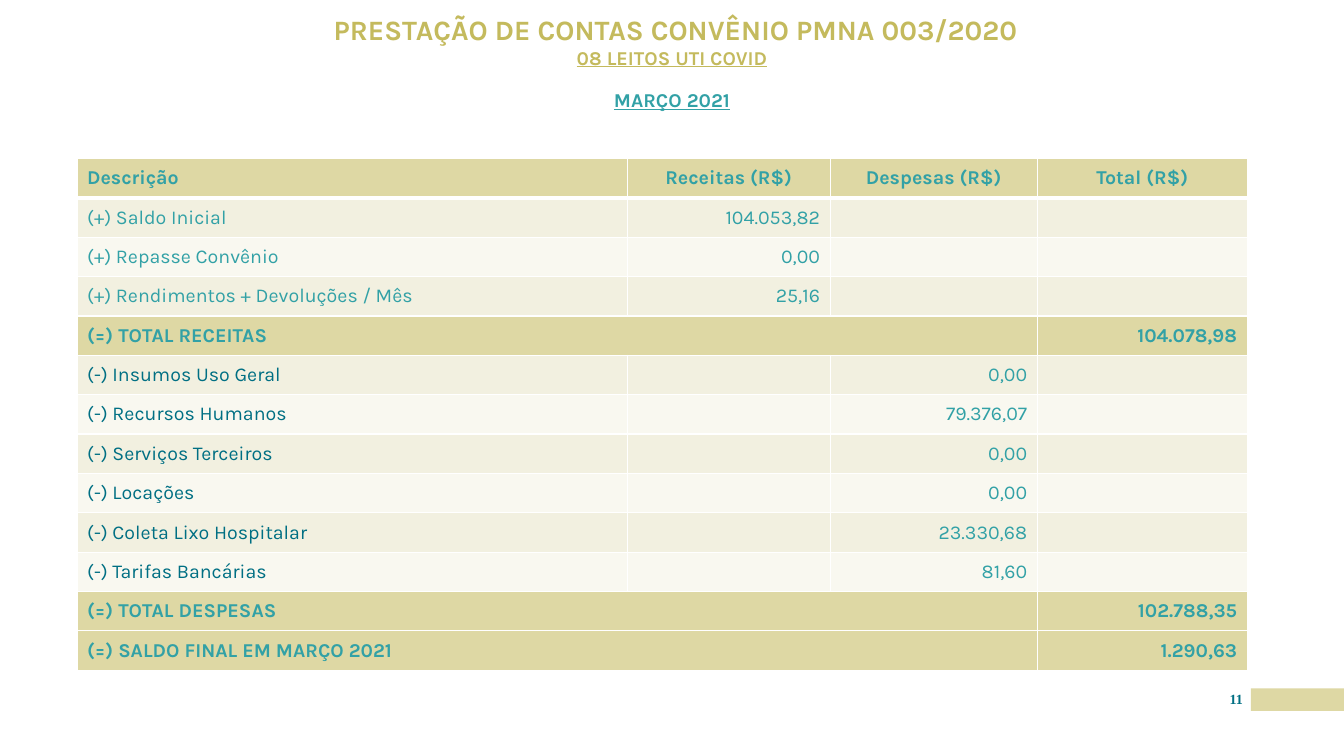
"""Build the March 2021 statement-of-accounts slide."""
from lxml.etree import SubElement
from pptx import Presentation
from pptx.dml.color import RGBColor
from pptx.enum.shapes import MSO_SHAPE
from pptx.enum.text import MSO_ANCHOR, PP_ALIGN
from pptx.oxml.ns import qn
from pptx.util import Pt

GOLD, SAND, TEAL, PETROL, WHITE = "C4BA5D", "DED8A4", "32A1A6", "006F83", "FFFFFF"
BANDS = ("F9F8F0", "F2F0E0")

HEADINGS = [
    (" PRESTAÇÃO DE CONTAS CONVÊNIO PMNA 003/2020", 20, GOLD, False, 0),
    ("08 LEITOS UTI COVID", 14, GOLD, True, 1),
    ("MARÇO 2021", 14, TEAL, True, 15),
]
PAGE_NUMBER = "11"
COLUMN_WIDTHS = (393, 145, 148, 150)
ROW_HEIGHT = 28.14
STATEMENT = [
    ("Descrição", "Receitas (R$)", "Despesas (R$)", "Total (R$)"),
    ("(+) Saldo Inicial", "104.053,82", "", ""),
    ("(+) Repasse Convênio", "0,00", "", ""),
    ("(+) Rendimentos + Devoluções / Mês", "25,16", "", ""),
    ("(=) TOTAL RECEITAS", "", "", "104.078,98"),
    ("(-) Insumos Uso Geral", "", "0,00", ""),
    ("(-) Recursos Humanos", "", "79.376,07", ""),
    ("(-) Serviços Terceiros", "", "0,00", ""),
    ("(-) Locações", "", "0,00", ""),
    ("(-) Coleta Lixo Hospitalar", "", "23.330,68", ""),
    ("(-) Tarifas Bancárias", "", "81,60", ""),
    ("(=) TOTAL DESPESAS", "", "", "102.788,35"),
    ("(=) SALDO FINAL EM MARÇO 2021", "", "", "1.290,63"),
]


def rgb(color):
    return RGBColor.from_string(color)


def style(paragraph, size, color, bold, align, face="Karla"):
    paragraph.alignment = align
    font = paragraph.font
    font.name, font.size, font.bold = face, Pt(size), bold
    font.color.rgb = rgb(color)


def add_text_frame(slide, left, top, width, height):
    frame = slide.shapes.add_textbox(Pt(left), Pt(top), Pt(width), Pt(height)).text_frame
    frame.word_wrap = True
    frame.margin_left = frame.margin_right = frame.margin_top = frame.margin_bottom = 0
    return frame


def set_borders(cell, bottom_width):
    properties = cell._tc.get_or_add_tcPr()
    widths = {"a:lnL": 1, "a:lnR": 1, "a:lnT": 1, "a:lnB": bottom_width}
    for position, (side, width) in enumerate(widths.items()):
        line = SubElement(properties, qn(side), w=str(Pt(width)))
        SubElement(SubElement(line, qn("a:solidFill")), qn("a:srgbClr"), val=WHITE)
        properties.insert(position, line)


def add_headings(slide):
    frame = add_text_frame(slide, 0, 12, 960, 106)
    for index, (text, size, color, underline, gap) in enumerate(HEADINGS):
        paragraph = frame.add_paragraph() if index else frame.paragraphs[0]
        paragraph.text = text
        paragraph.line_spacing = 0.9
        paragraph.space_before = Pt(gap)
        style(paragraph, size, color, True, PP_ALIGN.CENTER)
        paragraph.font.underline = underline


def add_statement(slide):
    table = slide.shapes.add_table(
        len(STATEMENT), len(COLUMN_WIDTHS), Pt(55), Pt(113.2),
        Pt(sum(COLUMN_WIDTHS)), Pt(ROW_HEIGHT * len(STATEMENT))).table
    table.horz_banding = False
    for column, width in zip(table.columns, COLUMN_WIDTHS):
        column.width = Pt(width)
    for row, entries in enumerate(STATEMENT):
        table.rows[row].height = Pt(ROW_HEIGHT)
        header, total = row == 0, entries[0].startswith("(=)")
        strong = header or total
        for column, entry in enumerate(entries):
            cell = table.cell(row, column)
            cell.text = entry
            cell.vertical_anchor = MSO_ANCHOR.MIDDLE
            cell.margin_top = cell.margin_bottom = Pt(2)
            cell.fill.solid()
            cell.fill.fore_color.rgb = rgb(SAND if strong else BANDS[row % 2])
            set_borders(cell, 3 if header else 1)
            expense = column == 0 and entry.startswith("(-)")
            figures = PP_ALIGN.CENTER if header else PP_ALIGN.RIGHT
            style(cell.text_frame.paragraphs[0], 14, PETROL if expense else TEAL,
                  strong, figures if column else PP_ALIGN.LEFT)
        if total:
            table.cell(row, 0).merge(table.cell(row, 2))


def add_footer(slide):
    bar = slide.shapes.add_shape(MSO_SHAPE.RECTANGLE, Pt(893.6), Pt(491.8), Pt(66.4), Pt(16))
    bar.shadow.inherit = False
    bar.fill.solid()
    bar.fill.fore_color.rgb = rgb(SAND)
    bar.line.fill.background()
    number = add_text_frame(slide, 872.6, 493.2, 21, 18).paragraphs[0]
    number.text = PAGE_NUMBER
    style(number, 10, PETROL, True, PP_ALIGN.CENTER, "Times New Roman")


def main():
    presentation = Presentation()
    presentation.slide_width, presentation.slide_height = Pt(960), Pt(540)
    slide = presentation.slides.add_slide(presentation.slide_layouts[6])
    add_footer(slide)
    add_headings(slide)
    add_statement(slide)
    presentation.save("out.pptx")


if __name__ == "__main__":
    main()
